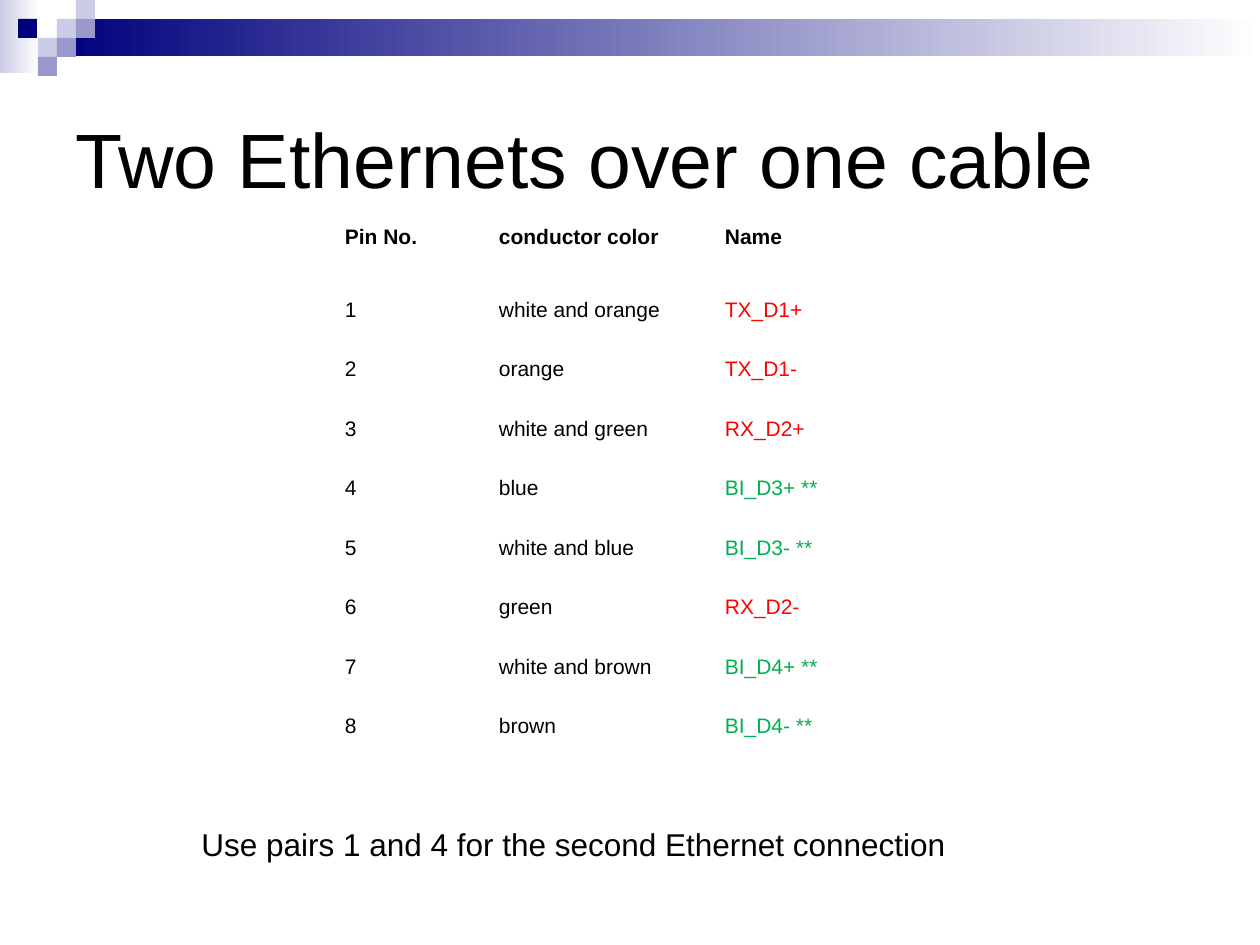
from pptx import Presentation, util as u
from pptx.dml.color import RGBColor
from pptx.enum import shapes, text

THEME = {
    "font": "Arial",
    "title": 44, "note": 18, "table": 12,
    "ink": "000000", "paper": "FFFFFF",
    "navy": "00007D", "violet": "9999CC", "lilac": "CCCCE6",
    "first": "FF0000", "second": "00B050",
}
SCALE = 914400 / 126


def px(*lengths):
    return [u.Emu(round(length * SCALE)) for length in lengths]


def style(frame, size, color="ink", bold=False):
    for run in frame.paragraphs[0].runs:
        run.font.name = THEME["font"]
        run.font.size = u.Pt(THEME[size])
        run.font.bold = bold
        run.font.color.rgb = RGBColor.from_string(THEME[color])


presentation = Presentation()
presentation.slide_width, presentation.slide_height = px(1260, 945)
slide = presentation.slides.add_slide(presentation.slide_layouts[6])

SQUARE = 19
decorations = [
    (0, 0, 39, 73, ("lilac", "paper")),
    (57, 19, 1203, 37, ("navy", "paper")),
]
for left, top, color in [
    (57, 19, "lilac"), (76, 0, "lilac"), (76, 19, "violet"), (38, 38, "lilac"),
    (18, 19, "navy"), (57, 38, "violet"), (38, 57, "violet"),
]:
    decorations.append((left, top, SQUARE, SQUARE, (color,)))

for left, top, width, height, colors in decorations:
    shape = slide.shapes.add_shape(
        shapes.MSO_SHAPE.RECTANGLE, *px(left, top, width, height))
    shape.shadow.inherit = False
    shape.line.fill.background()
    if len(colors) == 1:
        shape.fill.solid()
        shape.fill.fore_color.rgb = RGBColor.from_string(THEME[colors[0]])
    else:
        shape.fill.gradient()
        shape.fill.gradient_angle = 0
        for stop, color in zip(shape.fill.gradient_stops, colors):
            stop.color.rgb = RGBColor.from_string(THEME[color])

title = slide.shapes.add_textbox(*px(63, 63, 1134, 189)).text_frame
title.word_wrap = True
title.vertical_anchor = text.MSO_ANCHOR.MIDDLE
title.text = "Two Ethernets over one cable"
style(title, "title")

pins = [
    ("Pin No.", "conductor color", "Name"),
    ("1", "white and orange", "TX_D1+"),
    ("2", "orange", "TX_D1-"),
    ("3", "white and green", "RX_D2+"),
    ("4", "blue", "BI_D3+ **"),
    ("5", "white and blue", "BI_D3- **"),
    ("6", "green", "RX_D2-"),
    ("7", "white and brown", "BI_D4+ **"),
    ("8", "brown", "BI_D4- **"),
]
column_widths = [154, 226, 156]
table = slide.shapes.add_table(
    len(pins), len(column_widths), *px(336, 221, sum(column_widths), 535)).table
table.horz_banding = False
table.first_row = False
for column, width in zip(table.columns, px(*column_widths)):
    column.width = width

for row, values in enumerate(pins):
    for column, value in enumerate(values):
        cell = table.cell(row, column)
        cell.fill.background()
        cell.margin_left, cell.margin_right = px(9, 9)
        cell.margin_top, cell.margin_bottom = px(4, 4)
        header = row == 0
        cell.vertical_anchor = text.MSO_ANCHOR.TOP if header else text.MSO_ANCHOR.MIDDLE
        color = "ink"
        if column == 2 and not header:
            color = "second" if value.startswith("BI") else "first"
        cell.text_frame.text = value
        style(cell.text_frame, "table", color, header)

note = slide.shapes.add_textbox(*px(189, 819, 776, 50)).text_frame
note.word_wrap = False
note.auto_size = text.MSO_AUTO_SIZE.SHAPE_TO_FIT_TEXT
note.text = "Use pairs 1 and 4 for the second Ethernet connection"
style(note, "note")

presentation.save("out.pptx")
